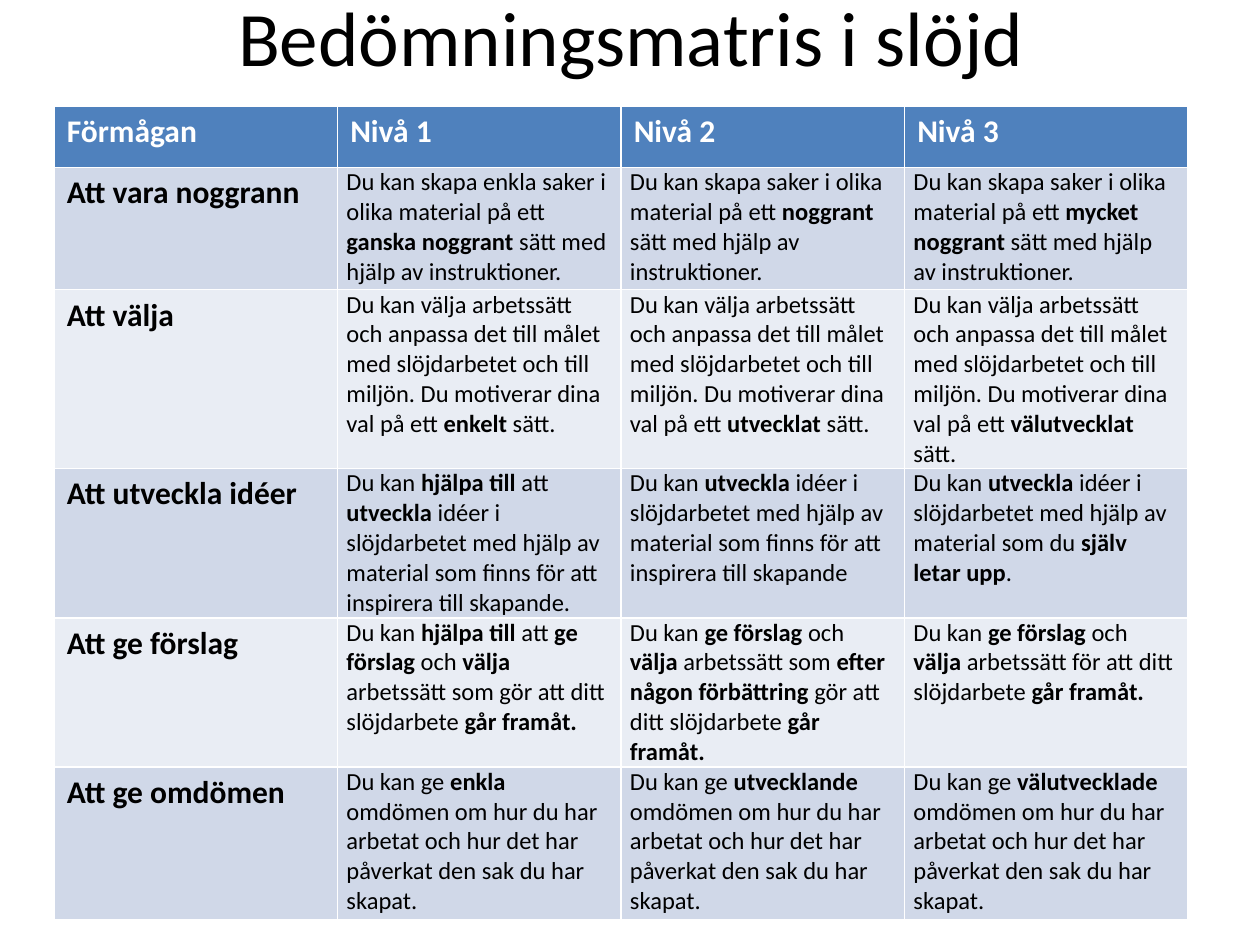
"""Build a one-slide assessment matrix for crafts education."""
from pptx import Presentation
from pptx import util as u
from pptx.dml.color import RGBColor
from pptx.enum import text

BLACK = RGBColor(0x00, 0x00, 0x00)
WHITE = RGBColor(0xFF, 0xFF, 0xFF)
HEADER_BLUE = RGBColor(0x4F, 0x81, 0xBD)
BAND_COLORS = [RGBColor(0xE9, 0xED, 0xF4), RGBColor(0xD0, 0xD8, 0xE8)]

CHOOSE = ("Du kan välja arbetssätt och anpassa det till målet med slöjdarbetet och till miljön. "
          "Du motiverar dina val på ett *{}* sätt.")
JUDGE = "Du kan ge *{}* omdömen om hur du har arbetat och hur det har påverkat den sak du har skapat."
MATRIX = [
    ["Förmågan", "Nivå 1", "Nivå 2", "Nivå 3"],
    ["Att vara noggrann",
     "Du kan skapa enkla saker i olika material på ett *ganska noggrant *sätt med hjälp av instruktioner.",
     "Du kan skapa saker i olika material på ett *noggrant* sätt med hjälp av instruktioner.",
     "Du kan skapa saker i olika material på ett *mycket noggrant* sätt med hjälp av instruktioner."],
    ["Att välja"] + [CHOOSE.format(level) for level in ("enkelt", "utvecklat", "välutvecklat")],
    ["Att utveckla idéer",
     "Du kan *hjälpa till* att *utveckla* idéer i slöjdarbetet med hjälp av material "
     "som finns för att inspirera till skapande.",
     "Du kan *utveckla* idéer i slöjdarbetet med hjälp av material "
     "som finns för att inspirera till skapande",
     "Du kan *utveckla* idéer i slöjdarbetet med hjälp av material som du *själv letar upp*."],
    ["Att ge förslag",
     "Du kan *hjälpa till* att *ge förslag *och *välja* arbetssätt som gör att ditt "
     "slöjdarbete *går framåt.*",
     "Du kan *ge förslag *och *välja* arbetssätt som *efter någon förbättring *gör att ditt "
     "slöjdarbete *går framåt.*",
     "Du kan *ge förslag *och *välja* arbetssätt för att ditt\nslöjdarbete *går framåt.*"],
    ["Att ge omdömen"] + [JUDGE.format(level) for level in ("enkla", "utvecklande", "välutvecklade")],
]
ROW_HEIGHTS = [0.49, 0.97, 1.21, 0.97, 0.97, 1.21]


def write(frame, content, size=14, color=BLACK, bold=False, align=text.PP_ALIGN.LEFT):
    """Write lines of text, with the parts between asterisks in bold."""
    for number, line in enumerate(content.split("\n")):
        paragraph = frame.add_paragraph() if number else frame.paragraphs[0]
        paragraph.alignment = align
        for position, part in enumerate(line.split("*")):
            if part:
                run = paragraph.add_run()
                run.text = part
                run.font.name = "Calibri"
                run.font.size = u.Pt(size)
                run.font.bold = bold or position % 2 == 1
                run.font.color.rgb = color


prs = Presentation()
prs.slide_width, prs.slide_height = u.Inches(10), u.Inches(7.5)
slide = prs.slides.add_slide(prs.slide_layouts[5])

heading = slide.shapes.title
heading.left, heading.top = u.Inches(0.51), u.Inches(-0.34)
heading.width, heading.height = u.Inches(9), u.Inches(1.25)
heading.text_frame.vertical_anchor = text.MSO_ANCHOR.MIDDLE
write(heading.text_frame, "Bedömningsmatris i slöjd", size=44, align=text.PP_ALIGN.CENTER)

matrix = slide.shapes.add_table(
    len(MATRIX), len(MATRIX[0]),
    u.Inches(0.43), u.Inches(0.84), u.Inches(9), u.Inches(sum(ROW_HEIGHTS))).table

for row, (abilities, height) in enumerate(zip(MATRIX, ROW_HEIGHTS)):
    matrix.rows[row].height = u.Inches(height)
    for column, content in enumerate(abilities):
        cell = matrix.cell(row, column)
        cell.fill.solid()
        cell.fill.fore_color.rgb = BAND_COLORS[row % 2] if row else HEADER_BLUE
        if row and column:
            cell.margin_left = cell.margin_right = u.Inches(0.07)
            cell.margin_top = cell.margin_bottom = u.Inches(0)
            write(cell.text_frame, content)
        else:
            write(cell.text_frame, content, size=18, bold=True, color=BLACK if row else WHITE)

prs.save("out.pptx")
